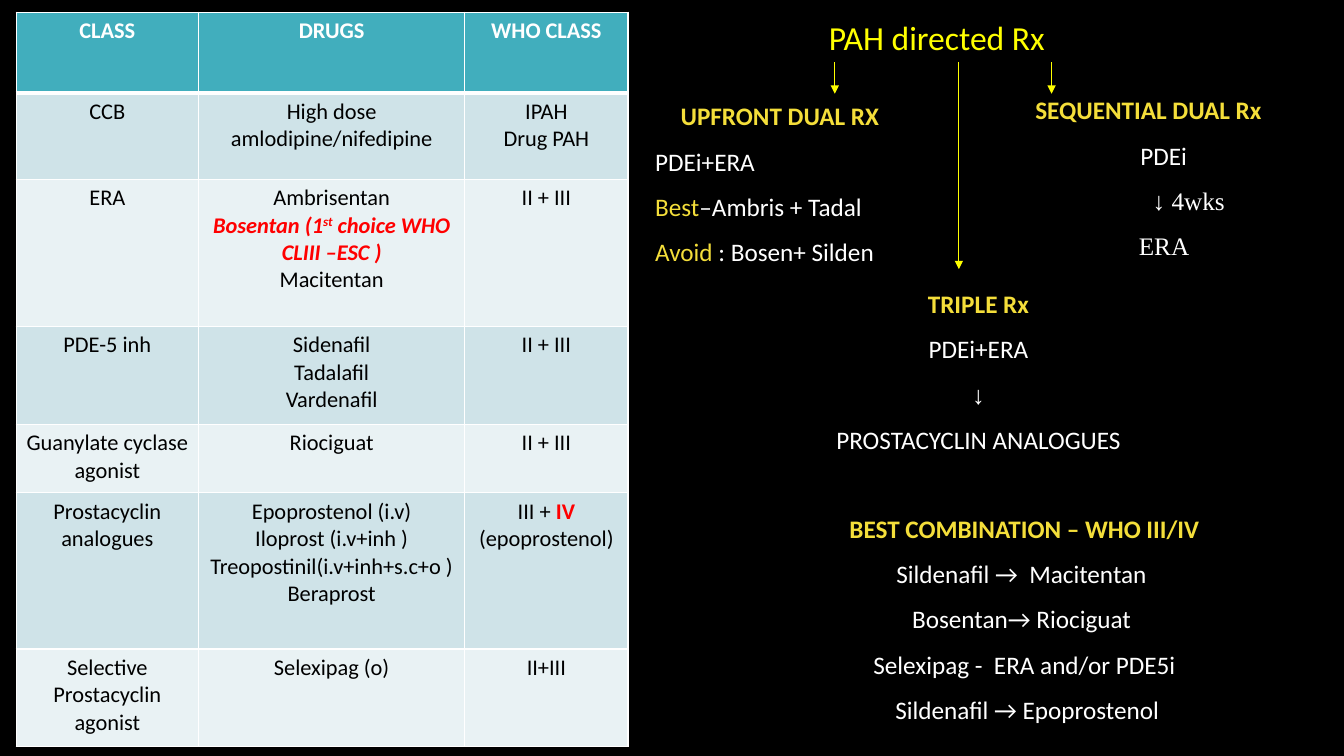
import pptx
import pptx.util
import pptx.dml.color
import pptx.enum.shapes
import pptx.enum.text
import pptx.oxml
import pptx.oxml.ns

Inches = pptx.util.Inches
Pt = pptx.util.Pt
RGBColor = pptx.dml.color.RGBColor
ALIGN = pptx.enum.text.PP_ALIGN
LEFT, MID = ALIGN.LEFT, ALIGN.CENTER
NS = pptx.oxml.ns.nsdecls("a")

BLACK = RGBColor(0x00, 0x00, 0x00)
WHITE = RGBColor(0xFF, 0xFF, 0xFF)
RED = RGBColor(0xFF, 0x00, 0x00)
YELLOW = RGBColor(0xFF, 0xFF, 0x00)
GOLD = RGBColor(0xF4, 0xDE, 0x3A)
TEAL = RGBColor(0x41, 0xAE, 0xBD)
PALE = RGBColor(0xE9, 0xF2, 0xF4)
MIST = RGBColor(0xCF, 0xE3, 0xE8)


def style(par, size, color, bold=False, align=MID, face="Calibri"):
    par.alignment = align
    font = par.font
    font.size, font.name, font.bold = Pt(size), face, bold
    font.color.rgb = color


def border(cell, top, bottom):
    """Draw white cell edges; top and bottom are widths in points."""
    props = cell._tc.get_or_add_tcPr()
    for side, width in zip("LRTB", (1, 1, top, bottom)):
        props.append(pptx.oxml.parse_xml(
            f'<a:ln{side} {NS} w="{Pt(width)}"><a:solidFill>'
            f'<a:srgbClr val="{WHITE}"/></a:solidFill></a:ln{side}>'))


deck = pptx.Presentation()
deck.slide_width, deck.slide_height = Inches(13.33), Inches(7.5)
slide = deck.slides.add_slide(deck.slide_layouts[5])
slide.background.fill.solid()
slide.background.fill.fore_color.rgb = BLACK

title = slide.shapes.title
title.left, title.top = Inches(8.12), Inches(0.12)
title.width, title.height = Inches(4.01), Inches(0.5)
frame = title.text_frame
frame.text = "PAH directed Rx"
frame.auto_size = pptx.enum.text.MSO_AUTO_SIZE.NONE
frame.vertical_anchor = pptx.enum.text.MSO_ANCHOR.TOP
style(frame.paragraphs[0], 24, YELLOW, align=LEFT)

# Drug table: "|" parts the runs of a line
rows = [
    ("CLASS", "DRUGS", "WHO CLASS"),
    ("CCB", "High dose amlodipine/nifedipine", "IPAH\nDrug PAH"),
    ("ERA", "Ambrisentan\nBosentan (1|st| choice WHO CLIII –ESC )\nMacitentan",
     "II + III"),
    ("PDE-5 inh", "Sidenafil\nTadalafil\nVardenafil", "II + III"),
    ("Guanylate cyclase agonist", "Riociguat", "II + III"),
    ("Prostacyclin analogues",
     "Epoprostenol (i.v)\nIloprost (i.v+inh )\n"
     "Treopostinil(i.v+inh+s.c+o )\nBeraprost",
     "III + |IV| (epoprostenol)"),
    ("Selective Prostacyclin agonist", "Selexipag (o)", "II+III"),
]
widths = (1.81, 2.64, 1.62)
heights = (0.8, 0.86, 1.46, 0.97, 0.68, 1.55, 0.97)
table = slide.shapes.add_table(
    len(rows), len(widths), Inches(0.16), Inches(0.12),
    Inches(sum(widths)), Inches(sum(heights))).table
for col, width in zip(table.columns, widths):
    col.width = Inches(width)
for r, (texts, height) in enumerate(zip(rows, heights)):
    table.rows[r].height = Inches(height)
    for c, text in enumerate(texts):
        cell = table.cell(r, c)
        border(cell, 3 if r == 1 else 1, 3 if r == 0 else 1)
        cell.fill.solid()
        cell.fill.fore_color.rgb = TEAL if r == 0 else MIST if r % 2 else PALE
        for i, line in enumerate(text.split("\n")):
            par = (cell.text_frame.add_paragraph() if i
                   else cell.text_frame.paragraphs[0])
            for part in line.split("|"):
                par.add_run().text = part
            style(par, 16, BLACK if r else WHITE, r == 0)

choice = table.cell(2, 1).text_frame.paragraphs[1]
style(choice, 16, RED, True)
choice.font.italic = True
choice.runs[1].font._element.set("baseline", "30000")
four = table.cell(5, 2).text_frame.paragraphs[0].runs[1].font
four.bold = True
four.color.rgb = RED

# Therapy notes: place, heading align, heading spacing, body align, lines
SERIF = "Times New Roman"
notes = [
    ((6.4, 0.8, 2.67, 1.87), MID, 1.5, LEFT,
     ["UPFRONT DUAL RX", "PDEi+ERA", "Best|–Ambris + Tadal",
      "Avoid |: Bosen+ Silden"]),
    ((10.17, 0.89, 2.8, 1.72), LEFT, 1, MID,
     ["SEQUENTIAL DUAL Rx", "PDEi ", "↓ 4wks", "ERA "]),
    ((7.52, 2.81, 4.37, 1.72), MID, 1, MID,
     ["TRIPLE Rx", "PDEi+ERA", "↓", "PROSTACYCLIN ANALOGUES"]),
    ((8.12, 4.89, 4.08, 2.32), MID, 1.5, MID,
     ["BEST COMBINATION – WHO III/IV", "Sildenafil →  Macitentan ",
      "Bosentan→ Riociguat ", "Selexipag -  ERA and/or PDE5i",
      " Sildenafil → Epoprostenol"]),
]
for place, head, space, body, lines in notes:
    box = slide.shapes.add_textbox(*map(Inches, place))
    frame = box.text_frame
    frame.word_wrap = True
    for i, line in enumerate(lines):
        par = frame.add_paragraph() if i else frame.paragraphs[0]
        parts = line.split("|")
        for part in parts:
            par.add_run().text = part
        if line == "↓ 4wks":
            par._p.get_or_add_pPr().set("marL", str(Inches(0.44)))
        par.line_spacing = 1.5 if i else space
        face = SERIF if line in ("↓ 4wks", "ERA ", "↓") else "Calibri"
        style(par, 18, WHITE if i else GOLD, i == 0, body if i else head, face)
        if len(parts) > 1:
            par.runs[0].font.color.rgb = GOLD

# Arrows from the title to each therapy
for x, end in ((8.28, 0.93), (10.43, 0.93), (9.51, 2.67)):
    arrow = slide.shapes.add_connector(
        pptx.enum.shapes.MSO_CONNECTOR.STRAIGHT,
        Inches(x), Inches(0.62), Inches(x), Inches(end))
    arrow.line.color.rgb = YELLOW
    arrow.line.width = Pt(0.5)
    props = arrow._element.spPr
    props.find(pptx.oxml.ns.qn("a:ln")).append(
        pptx.oxml.parse_xml(f'<a:tailEnd {NS} type="triangle"/>'))
    props.append(pptx.oxml.parse_xml(f"<a:effectLst {NS}/>"))

deck.save("out.pptx")
